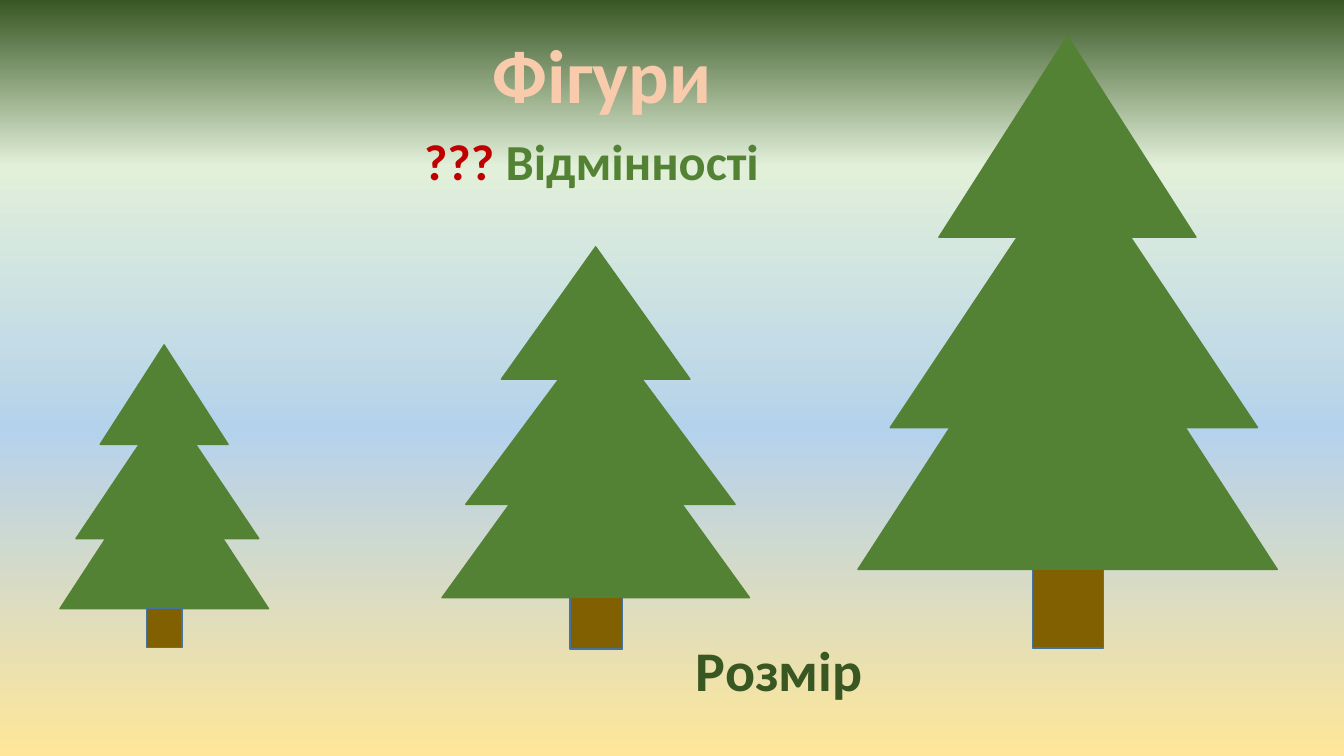
from lxml.etree import SubElement
from pptx import Presentation
from pptx.dml.color import RGBColor
from pptx.enum.shapes import MSO_SHAPE
from pptx.enum.text import MSO_AUTO_SIZE, PP_ALIGN
from pptx.oxml.ns import qn
from pptx.util import Cm, Pt

GREEN, DARK_GREEN, BROWN, BLUE = "548235", "385723", "806000", "43739E"
PEACH, ORANGE, RED = "F8CBAD", "ED7D31", "C00000"
SKY = [(0, DARK_GREEN), (22, "E2F0D9"), (57, "B5D2EC"), (100, "FFE699")]

# Left, top, width, height as shares of the crown's width and height
TIERS = [(0.077, 0.218, 0.876, 0.516),
         (0.193, 0, 0.613, 0.377),
         (0, 0.394, 1, 0.606)]
TRUNK = (0.416, 1, 0.17, 0.147)

# Left, top, width and height of each crown, in cm
TREES = [(21.62, 0.91, 10.57, 13.44),
         (11.14, 6.22, 7.75, 8.84),
         (1.51, 8.69, 5.26, 6.65)]


def color(value):
    return RGBColor.from_string(value)


def add_background(s, stops):
    fill = s.background.fill
    fill.gradient()
    fill.gradient_angle = 270
    gs_list = s.element.find(".//" + qn("a:gsLst"))
    for gs in list(gs_list):
        gs_list.remove(gs)
    for percent, value in stops:
        gs = SubElement(gs_list, qn("a:gs"), pos=str(percent * 1000))
        SubElement(gs, qn("a:srgbClr"), val=value)


def add_part(group, kind, crown, share, fill, line):
    """Place a shape by its shares of the crown's box."""
    left, top, width, height = crown
    x, y, w, h = share
    sp = group.shapes.add_shape(kind, Cm(left + x * width), Cm(top + y * height),
                                Cm(w * width), Cm(h * height))
    sp.shadow.inherit = False
    sp.fill.solid()
    sp.fill.fore_color.rgb = color(fill)
    sp.line.color.rgb = color(line)
    sp.line.width = Pt(1)


def add_tree(s, crown):
    group = s.shapes.add_group_shape()
    for tier in TIERS:
        add_part(group, MSO_SHAPE.ISOSCELES_TRIANGLE, crown, tier, GREEN, GREEN)
    add_part(group, MSO_SHAPE.RECTANGLE, crown, TRUNK, BROWN, BLUE)


def add_text(s, left, top, width, height, size, runs, wrap=False):
    """Add a centred bold line and return its last run."""
    tf = s.shapes.add_textbox(Cm(left), Cm(top), Cm(width), Cm(height)).text_frame
    tf.word_wrap = wrap
    tf.auto_size = MSO_AUTO_SIZE.SHAPE_TO_FIT_TEXT
    p = tf.paragraphs[0]
    p.alignment = PP_ALIGN.CENTER
    for text, value in runs:
        r = p.add_run()
        r.text = text
        r.font.name = "Calibri"
        r.font.size = Pt(size)
        r.font.bold = True
        r.font.color.rgb = color(value)
    return r


def outline_text(r, value, width):
    """Outline a run; the schema wants the line before the fill."""
    props = r._r.get_or_add_rPr()
    ln = SubElement(props, qn("a:ln"), w=str(Pt(width)))
    fill = SubElement(ln, qn("a:solidFill"))
    SubElement(fill, qn("a:srgbClr"), val=value)
    props.insert(0, ln)


def main():
    prs = Presentation()
    prs.slide_width, prs.slide_height = Cm(33.87), Cm(19.05)
    s = prs.slides.add_slide(prs.slide_layouts[6])
    add_background(s, SKY)
    for crown in TREES:
        add_tree(s, crown)
    add_text(s, 9.68, 3.15, 10.46, 1.8, 36,
             [("??? ", RED), ("Відмінності", GREEN)], wrap=True)
    title = add_text(s, 12.14, 0.58, 6.07, 2.57, 54, [("Фігури", PEACH)])
    outline_text(title, ORANGE, 1.75)
    add_text(s, 17.25, 15.9, 4.78, 1.96, 40, [("Розмір", DARK_GREEN)])
    prs.save("out.pptx")


if __name__ == "__main__":
    main()
